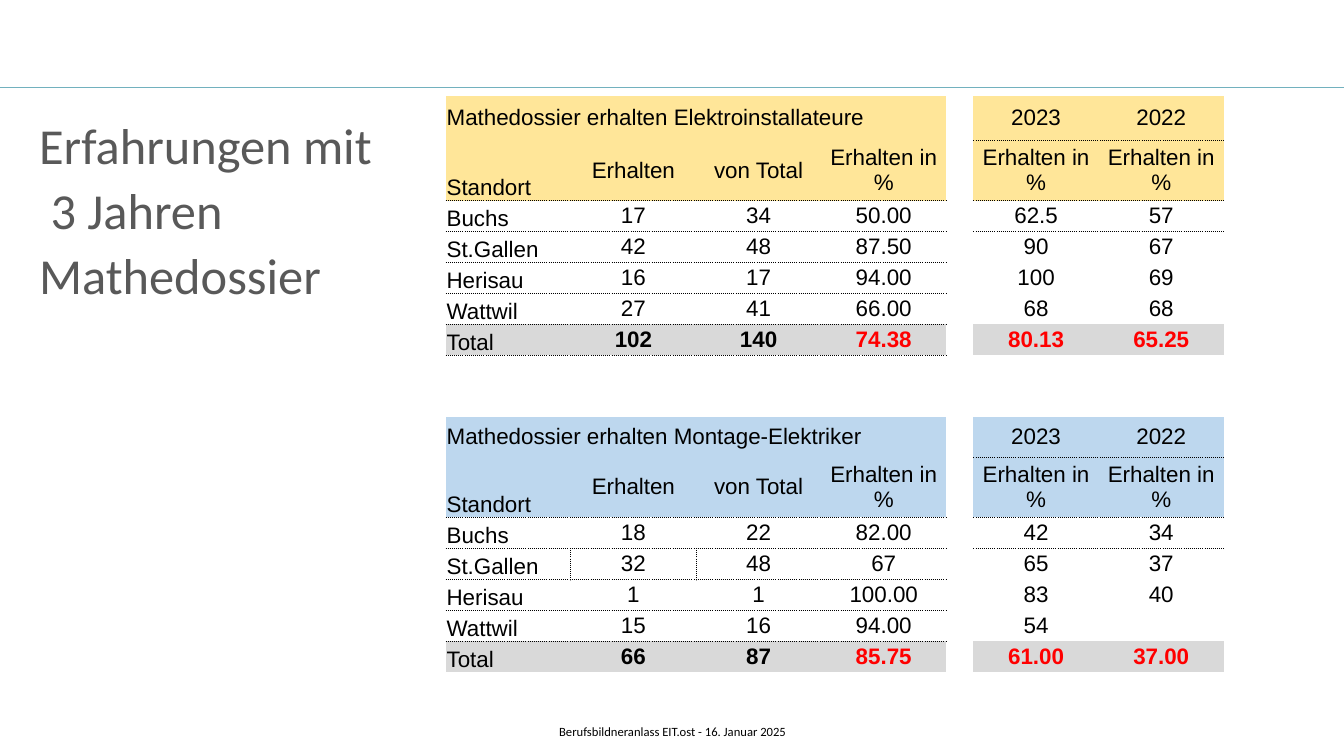
from lxml.etree import SubElement
from pptx import Presentation
from pptx.dml.color import RGBColor
from pptx.enum.shapes import MSO_CONNECTOR
from pptx.enum.text import MSO_ANCHOR, PP_ALIGN
from pptx.oxml.ns import qn
from pptx.util import Inches, Pt

COLORS = {
    "rule": "72B1BE",
    "heading": "595959",
    "text": "000000",
    "average": "FF0000",
    "total": "D9D9D9",
    "installers": "FFE699",
    "assemblers": "BDD7EE",
}
PLAIN_TABLE_STYLE = "{2D5ABB26-0587-4C30-8999-92F81FD0307C}"
GAP_COLUMN = 4
BLOCK_ROWS = 7
SECOND_BLOCK_ROW = 9

HEADER = ["Standort", "Erhalten", "von Total", "Erhalten in %", "", "Erhalten in %", "Erhalten in %"]
INSTALLERS = [
    ["Mathedossier erhalten Elektroinstallateure", "", "", "", "", "2023", "2022"],
    HEADER,
    ["Buchs", "17", "34", "50.00", "", "62.5", "57"],
    ["St.Gallen", "42", "48", "87.50", "", "90", "67"],
    ["Herisau", "16", "17", "94.00", "", "100", "69"],
    ["Wattwil", "27", "41", "66.00", "", "68", "68"],
    ["Total", "102", "140", "74.38", "", "80.13", "65.25"],
]
ASSEMBLERS = [
    ["Mathedossier erhalten Montage-Elektriker", "", "", "", "", "2023", "2022"],
    HEADER,
    ["Buchs", "18", "22", "82.00", "", "42", "34"],
    ["St.Gallen", "32", "48", "67", "", "65", "37"],
    ["Herisau", "1", "1", "100.00", "", "83", "40"],
    ["Wattwil", "15", "16", "94.00", "", "54", ""],
    ["Total", "66", "87", "85.75", "", "61.00", "37.00"],
]


def color(name):
    return RGBColor.from_string(COLORS[name])


def set_font(paragraph, family, size, color_name, bold=False):
    font = paragraph.font
    font.name, font.size, font.bold = family, Pt(size), bold
    font.color.rgb = color(color_name)


def add_rule(slide, left, top, width):
    line = slide.shapes.add_connector(
        MSO_CONNECTOR.STRAIGHT, Inches(left), Inches(top), Inches(left + width), Inches(top))
    line.line.color.rgb = color("rule")
    line.line.width = Pt(1)
    SubElement(line._element.spPr, qn("a:effectLst"))


def add_text_frame(slide, left, top, width, height):
    box = slide.shapes.add_textbox(Inches(left), Inches(top), Inches(width), Inches(height))
    box.text_frame.word_wrap = True
    return box.text_frame


def add_heading(slide, left, top, width, height):
    frame = add_text_frame(slide, left, top, width, height)
    frame.text = "Erfahrungen mit\n 3 Jahren\nMathedossier"
    for paragraph in frame.paragraphs:
        paragraph.line_spacing = 0.9
        paragraph.space_before = Pt(7.5)
        set_font(paragraph, "Calibri", 36, "heading")


def add_footer(slide, left, top, width, height):
    frame = add_text_frame(slide, left, top, width, height)
    frame.vertical_anchor = MSO_ANCHOR.MIDDLE
    frame.text = "Berufsbildneranlass EIT.ost - 16. Januar 2025"
    paragraph = frame.paragraphs[0]
    paragraph.alignment = PP_ALIGN.CENTER
    set_font(paragraph, "Calibri", 9, "text")


def add_dotted_border(cell, side):
    line = SubElement(cell._tc.get_or_add_tcPr(), qn(f"a:ln{side}"), w=str(Pt(0.5)))
    fill = SubElement(line, qn("a:solidFill"))
    SubElement(fill, qn("a:srgbClr"), val=COLORS["text"])
    SubElement(line, qn("a:prstDash"), val="dot")


def has_line_below(row, column):
    if column < GAP_COLUMN:
        return 1 <= row <= 5
    return column > GAP_COLUMN and row in (0, 1)


def fill_block(table, first_row, rows, header_color, divided_row=None):
    """Write one location block: title, header, four locations and total."""
    last_row = BLOCK_ROWS - 1
    for row, values in enumerate(rows):
        for column, value in enumerate(values):
            cell = table.cell(first_row + row, column)
            # Borders, in the order the file format expects
            if row == divided_row and column in (0, 1):
                add_dotted_border(cell, "R" if column == 0 else "L")
            if has_line_below(row - 1, column):
                add_dotted_border(cell, "T")
            if has_line_below(row, column):
                add_dotted_border(cell, "B")
            # Fill
            if column != GAP_COLUMN and row in (0, 1, last_row):
                cell.fill.solid()
                cell.fill.fore_color.rgb = color("total" if row == last_row else header_color)
            # Text
            if value:
                cell.text = value
                cell.vertical_anchor = (
                    MSO_ANCHOR.BOTTOM if column == 0 and row > 0 else MSO_ANCHOR.MIDDLE)
                paragraph = cell.text_frame.paragraphs[0]
                paragraph.alignment = PP_ALIGN.CENTER if column else PP_ALIGN.LEFT
                in_total = row == last_row and column > 0
                set_font(paragraph, "Arial", 16,
                         "average" if in_total and column >= 3 else "text", in_total)
    table.cell(first_row, 0).merge(table.cell(first_row, GAP_COLUMN - 1))


def add_results_table(slide, left, top, width, height):
    row_count, column_count = SECOND_BLOCK_ROW + BLOCK_ROWS, len(HEADER)
    table = slide.shapes.add_table(
        row_count, column_count, Inches(left), Inches(top), Inches(width), Inches(height)).table
    table.first_row = table.horz_banding = False
    table._tbl.tblPr.find(qn("a:tableStyleId")).text = PLAIN_TABLE_STYLE

    # Column widths and row heights
    gap_width = 0.27
    for index, column in enumerate(table.columns):
        column.width = Inches(
            gap_width if index == GAP_COLUMN else (width - gap_width) / (column_count - 1))
    tall_rows = {0: 0.44, 1: 0.6, SECOND_BLOCK_ROW: 0.4, SECOND_BLOCK_ROW + 1: 0.6}
    plain_height = (height - sum(tall_rows.values())) / (row_count - len(tall_rows))
    for index, row in enumerate(table.rows):
        row.height = Inches(tall_rows.get(index, plain_height))

    for cell in table.iter_cells():
        cell.margin_left = cell.margin_right = Inches(0.01)
        cell.margin_top = cell.margin_bottom = 0
        cell.fill.background()
        cell._tc.tcPr.remove(cell._tc.tcPr.find(qn("a:noFill")))

    fill_block(table, 0, INSTALLERS, "installers")
    fill_block(table, SECOND_BLOCK_ROW, ASSEMBLERS, "assemblers", divided_row=3)


def main():
    presentation = Presentation()
    presentation.slide_width, presentation.slide_height = Inches(13.33), Inches(7.5)
    slide = presentation.slides.add_slide(presentation.slide_layouts[6])
    add_rule(slide, 0, 0.87, 13.33)
    add_footer(slide, 4.42, 7.06, 4.5, 0.4)
    add_heading(slide, 0.29, 1.15, 12, 2.21)
    add_results_table(slide, 4.42, 0.95, 7.72, 5.72)
    presentation.save("out.pptx")


if __name__ == "__main__":
    main()
